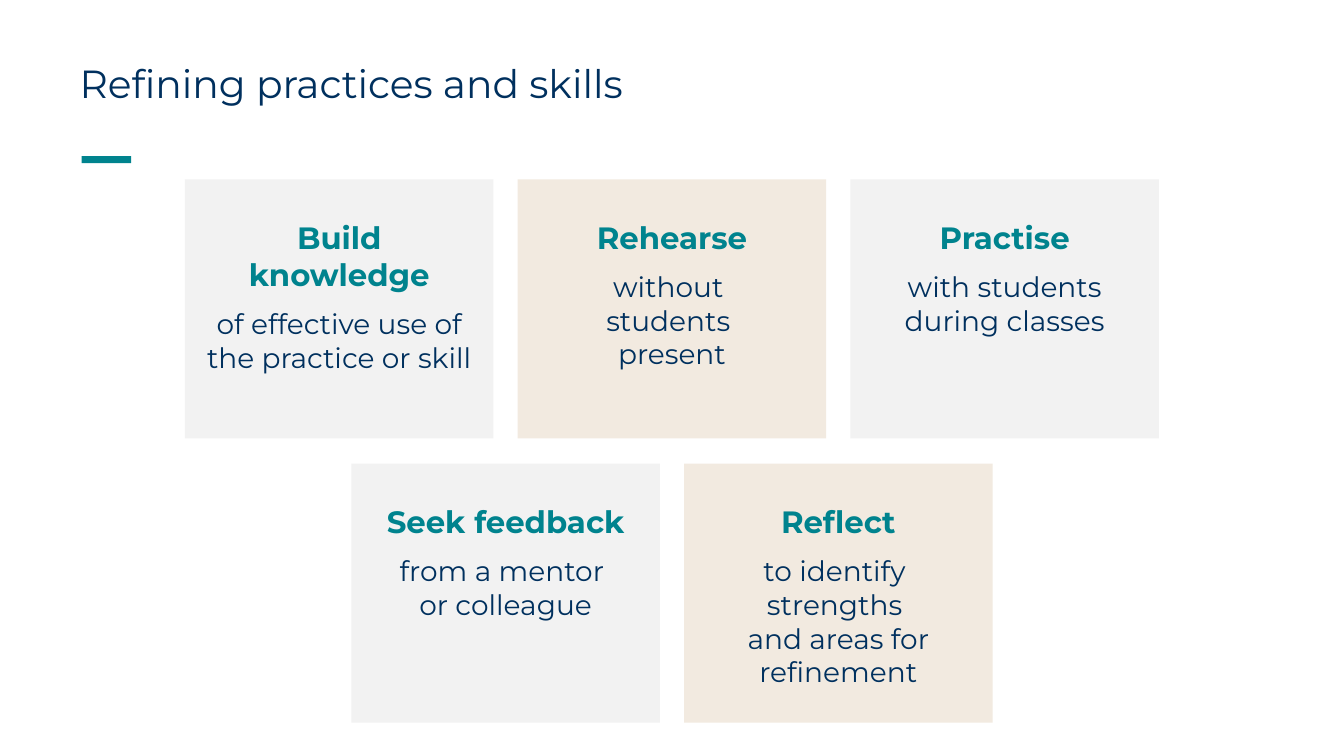
from pptx import Presentation
from pptx.dml.color import RGBColor
from pptx.enum.shapes import MSO_SHAPE
from pptx.enum.text import MSO_ANCHOR, MSO_AUTO_SIZE, PP_ALIGN
from pptx.util import Inches, Pt

COLOURS = {
    "navy": "00305E",
    "teal": "00838E",
    "grey": "F2F2F2",
    "sand": "F2EAE0",
}
FONT = "Montserrat"
SLIDE_WIDTH, SLIDE_HEIGHT = 13.33, 7.5
CARD_WIDTH, CARD_HEIGHT = 3.06, 2.57
COLUMN_STEP, ROW_STEP = 3.3, 2.82
GRID_TOP = 1.78
WIDE_INSET, NARROW_INSET = 0.2, 0.08

CARD_ROWS = [
    [
        ("Build knowledge", "of effective use of the practice or skill", "grey", WIDE_INSET),
        ("Rehearse", "without \nstudents \npresent", "sand", WIDE_INSET),
        ("Practise", "with students during classes", "grey", WIDE_INSET),
    ],
    [
        ("Seek feedback", "from a mentor \nor colleague", "grey", WIDE_INSET),
        ("Reflect", "to identify \nstrengths \nand areas for refinement", "sand", NARROW_INSET),
    ],
]


def write_text(paragraph, text, size, colour, bold=False, align=PP_ALIGN.LEFT,
               space_after=0, line_spacing=1.0):
    paragraph.text = text
    paragraph.alignment = align
    paragraph.space_before = Pt(0)
    paragraph.space_after = Pt(space_after)
    paragraph.line_spacing = line_spacing
    for run in paragraph.runs:
        run.font.name = FONT
        run.font.size = Pt(size)
        run.font.bold = bold
        run.font.color.rgb = RGBColor.from_string(COLOURS[colour])


def add_block(slide, left, top, width, height, colour):
    shape = slide.shapes.add_shape(
        MSO_SHAPE.RECTANGLE, Inches(left), Inches(top), Inches(width), Inches(height))
    shape.shadow.inherit = False
    shape.fill.solid()
    shape.fill.fore_color.rgb = RGBColor.from_string(COLOURS[colour])
    shape.line.fill.background()
    return shape


def add_card(slide, left, top, heading, detail, colour, inset):
    card = add_block(slide, left, top, CARD_WIDTH, CARD_HEIGHT, colour)
    frame = card.text_frame
    frame.word_wrap = True
    frame.vertical_anchor = MSO_ANCHOR.TOP
    frame.margin_left = frame.margin_right = Inches(inset)
    frame.margin_top, frame.margin_bottom = Inches(0.39), Inches(0.05)
    write_text(frame.paragraphs[0], heading, size=22, colour="teal", bold=True,
               align=PP_ALIGN.CENTER, space_after=10)
    write_text(frame.add_paragraph(), detail, size=20, colour="navy",
               align=PP_ALIGN.CENTER)


def add_title(slide, text):
    title = slide.shapes.title
    title.left, title.top = Inches(0.69), Inches(0.44)
    title.width, title.height = Inches(11.85), Inches(0.83)
    frame = title.text_frame
    frame.word_wrap = True
    frame.auto_size = MSO_AUTO_SIZE.NONE
    frame.vertical_anchor = MSO_ANCHOR.MIDDLE
    write_text(frame.paragraphs[0], text, size=28, colour="navy", line_spacing=0.9)


def main():
    presentation = Presentation()
    presentation.slide_width = Inches(SLIDE_WIDTH)
    presentation.slide_height = Inches(SLIDE_HEIGHT)
    slide = presentation.slides.add_slide(presentation.slide_layouts[5])
    add_title(slide, "Refining practices and skills")
    add_block(slide, 0.81, 1.55, 0.49, 0.07, "teal")
    for row, cards in enumerate(CARD_ROWS):
        row_width = CARD_WIDTH + (len(cards) - 1) * COLUMN_STEP
        row_left = (SLIDE_WIDTH - row_width) / 2
        for column, card in enumerate(cards):
            add_card(slide, row_left + column * COLUMN_STEP,
                     GRID_TOP + row * ROW_STEP, *card)
    presentation.save("out.pptx")


if __name__ == "__main__":
    main()
